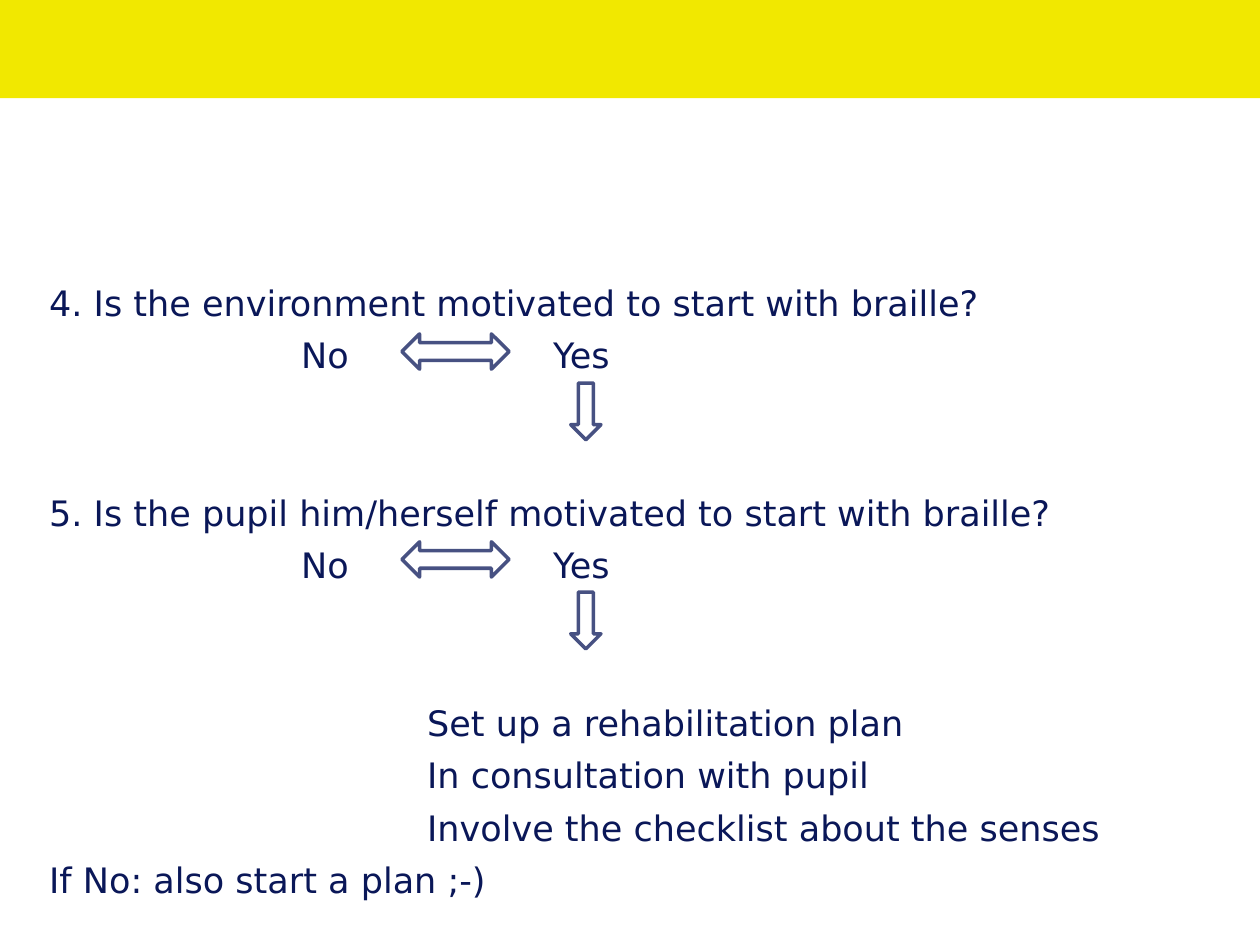
from pptx import Presentation
from pptx.dml.color import RGBColor
from pptx.enum.shapes import MSO_SHAPE
from pptx.enum.text import MSO_ANCHOR, PP_ALIGN
from pptx.util import Inches, Pt

RECTANGLE = MSO_SHAPE.RECTANGLE
LEFT_RIGHT = MSO_SHAPE.LEFT_RIGHT_ARROW
DOWN = MSO_SHAPE.DOWN_ARROW
TOP = MSO_ANCHOR.TOP
LEFT = PP_ALIGN.LEFT

# Content
COLORS = {"band": "F1E800", "text": "0A1758", "outline": "475182", "white": "FFFFFF"}
FONT = "DejaVu Sans"
LINE_PITCH = 30  # points
TEXT_LEFT, TEXT_TOP = 0.39, 2.15
QUESTION_LINES = 4  # question, answers and room for the down arrow
PLAN_INDENT = 3
QUESTIONS = [
    "4. Is the environment motivated to start with braille?",
    "5. Is the pupil him/herself motivated to start with braille?",
]
ANSWERS = [("No", 2), ("Yes", 4)]  # label, inches from the left of the text
PLAN = [
    "Set up a rehabilitation plan",
    "In consultation with pupil",
    "Involve the checklist about the senses",
]
CLOSING = "If No: also start a plan ;-)"
ARROW_ROWS = [(2.65, 3.04), (4.3, 4.7)]  # tops of the sideways and down arrows


def add_frame(page, left, top, width, height):
    box = page.shapes.add_textbox(
        Inches(left), Inches(top), Inches(width), Inches(height))
    frame = box.text_frame
    frame.word_wrap = True
    frame.vertical_anchor = TOP
    frame.margin_left = frame.margin_right = 0
    frame.margin_top = frame.margin_bottom = 0
    return frame


def add_line(frame, text, indent=0, lines_before=0):
    first = frame.paragraphs[0]
    para = first if not first.runs else frame.add_paragraph()
    para.alignment = LEFT
    para.line_spacing = Pt(LINE_PITCH)
    para.space_before = Pt(LINE_PITCH * lines_before)
    properties = para._p.get_or_add_pPr()
    properties.set("marL", str(Inches(indent)))
    properties.set("indent", "0")
    span = para.add_run()
    span.text = text
    span.font.name = FONT
    span.font.size = Pt(20)
    span.font.color.rgb = RGBColor.from_string(COLORS["text"])


def add_block(page, kind, left, top, width, height, fill, outline=None):
    shape = page.shapes.add_shape(
        kind, Inches(left), Inches(top), Inches(width), Inches(height))
    shape.shadow.inherit = False
    shape.fill.solid()
    shape.fill.fore_color.rgb = RGBColor.from_string(COLORS[fill])
    if outline:
        shape.line.color.rgb = RGBColor.from_string(COLORS[outline])
        shape.line.width = Pt(2)
    else:
        shape.line.fill.background()


deck = Presentation()
deck.slide_width, deck.slide_height = Inches(10), Inches(7.5)
page = deck.slides.add_slide(deck.slide_layouts[6])

# Top band
add_block(page, RECTANGLE, 0, 0, 10, 0.78, "band")

# Questions, plan and closing line
frame = add_frame(page, TEXT_LEFT, TEXT_TOP, 9.21, 5.22)
room = QUESTION_LINES - 1
for index, question in enumerate(QUESTIONS):
    add_line(frame, question, lines_before=room if index else 0)
for index, step in enumerate(PLAN):
    add_line(frame, step, indent=PLAN_INDENT, lines_before=0 if index else room)
add_line(frame, CLOSING)

# Answers on the line below each question
pitch = LINE_PITCH / 72
for index in range(len(QUESTIONS)):
    answer_top = TEXT_TOP + (index * QUESTION_LINES + 1) * pitch
    for answer, offset in ANSWERS:
        answer_frame = add_frame(page, TEXT_LEFT + offset, answer_top, 0.7, pitch)
        add_line(answer_frame, answer)

# Arrows between the answers and down to the next step
for sideways_top, down_top in ARROW_ROWS:
    add_block(page, LEFT_RIGHT, 3.19, sideways_top, 0.85, 0.28, "white", "outline")
    add_block(page, DOWN, 4.53, down_top, 0.24, 0.45, "white", "outline")

deck.save("out.pptx")
